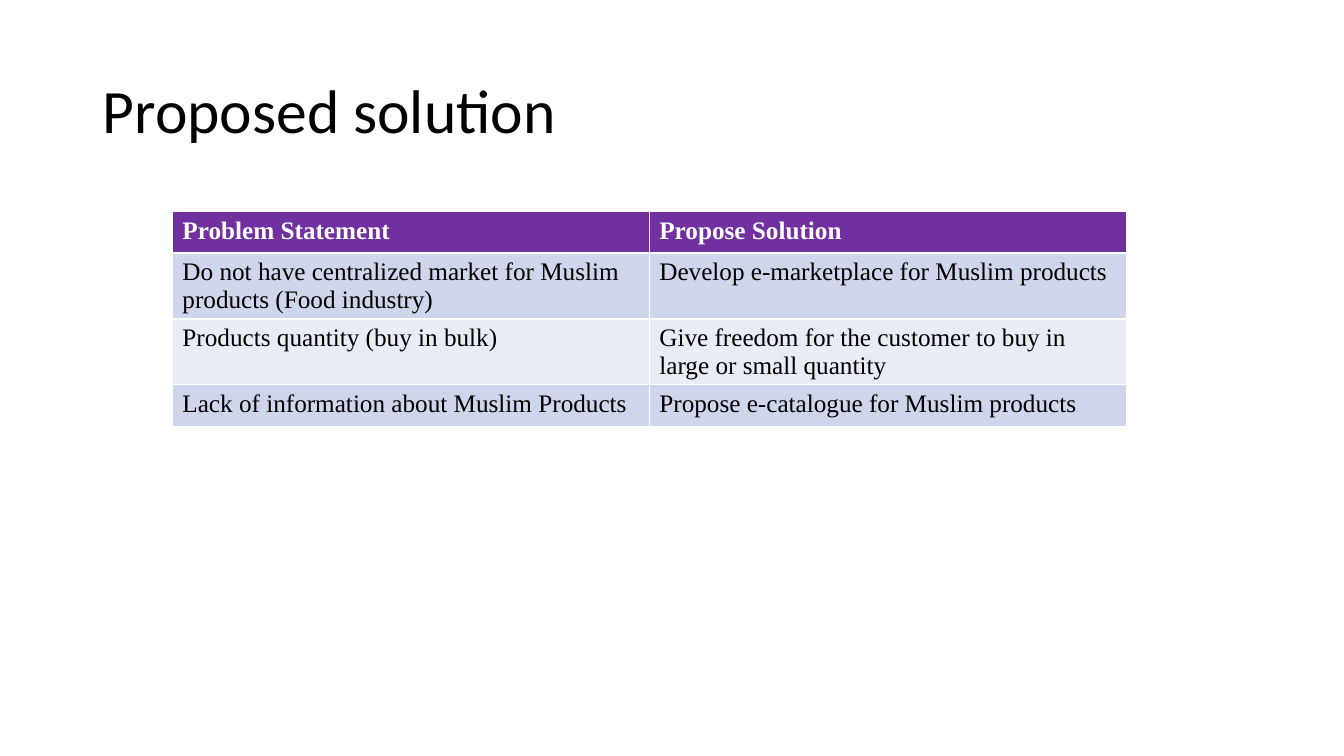
from typing import NamedTuple

from pptx import Presentation
from pptx.dml.color import RGBColor
from pptx.enum import text
from pptx.util import Inches, Pt

BLACK = RGBColor(0x00, 0x00, 0x00)
WHITE = RGBColor(0xFF, 0xFF, 0xFF)
PURPLE = RGBColor(0x70, 0x30, 0xA0)
BLUE = RGBColor(0xCF, 0xD5, 0xEA)
PALE = RGBColor(0xE9, 0xEB, 0xF5)

TITLE = {"name": "Calibri", "size": Pt(44), "bold": False}
HEAD = {"name": "Times New Roman", "size": Pt(18), "bold": True}
BODY = {**HEAD, "bold": False}


class Row(NamedTuple):
    problem: str
    answer: str


ROWS = [
    Row("Problem Statement", "Propose Solution"),
    Row("Do not have centralized market for Muslim products (Food industry)",
        "Develop e-marketplace for Muslim products"),
    Row("Products quantity (buy in bulk)",
        "Give freedom for the customer to buy in large or small quantity"),
    Row("Lack of information about Muslim Products",
        "Propose e-catalogue for Muslim products"),
]


def style(run, form: dict, color: RGBColor) -> None:
    for key, value in form.items():
        setattr(run.font, key, value)
    run.font.color.rgb = color


def add_title(slide, words: str) -> None:
    title = slide.shapes.title
    title.left, title.top = Inches(0.92), Inches(0.4)
    title.width, title.height = Inches(11.5), Inches(1.45)
    frame = title.text_frame
    frame.word_wrap = True
    frame.vertical_anchor = text.MSO_ANCHOR.MIDDLE
    para = frame.paragraphs[0]
    para.alignment = text.PP_ALIGN.LEFT
    para.line_spacing = 0.9
    run = para.add_run()
    run.text = words
    style(run, TITLE, BLACK)


def add_grid(slide, rows: list[Row]) -> None:
    frame = slide.shapes.add_table(
        len(rows), len(Row._fields),
        Inches(1.71), Inches(2.1), Inches(9.46), Inches(2.21))
    grid = frame.table
    for i, row in enumerate(rows):
        grid.rows[i].height = Inches(0.41)
        head = i == 0
        fill = PURPLE if head else BLUE if i % 2 else PALE
        for j, words in enumerate(row):
            cell = grid.cell(i, j)
            cell.fill.solid()
            cell.fill.fore_color.rgb = fill
            run = cell.text_frame.paragraphs[0].add_run()
            run.text = words
            style(run, HEAD if head else BODY, WHITE if head else BLACK)
    frame.height = Inches(2.21)


def main() -> None:
    deck = Presentation()
    deck.slide_width, deck.slide_height = Inches(13.33), Inches(7.5)
    slide = deck.slides.add_slide(deck.slide_layouts.get_by_name("Title Only"))
    add_title(slide, "Proposed solution")
    add_grid(slide, ROWS)
    deck.save("out.pptx")


if __name__ == "__main__":
    main()
